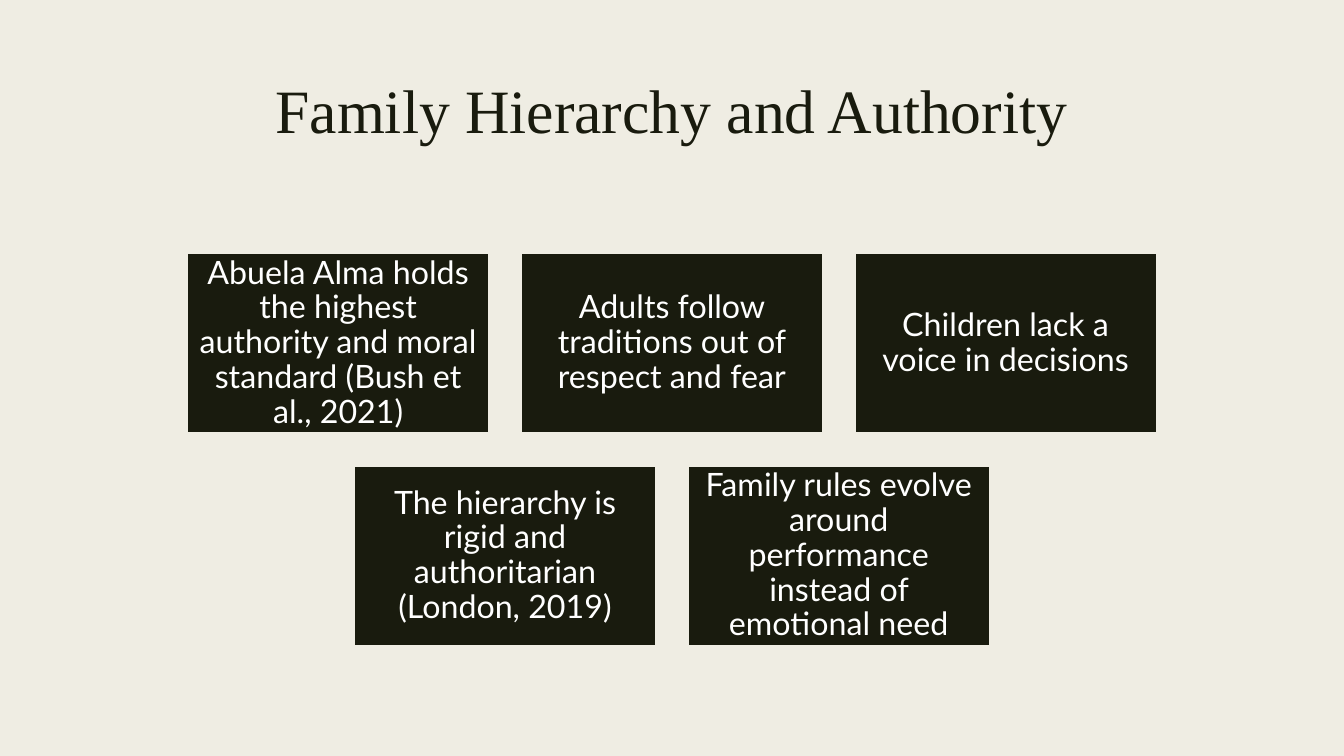
"""Build the slide on family hierarchy and authority."""
from pptx import Presentation
from pptx.dml.color import RGBColor
from pptx.enum.shapes import MSO_SHAPE
from pptx.enum.text import MSO_ANCHOR, PP_ALIGN
from pptx.util import Inches, Pt

COLORS = {"cream": "EFEDE3", "olive": "191B0E", "white": "FFFFFF"}
SLIDE_WIDTH, SLIDE_HEIGHT = 13.33, 7.5
CARD_WIDTH, CARD_HEIGHT, CARD_GAP = 3.01, 1.81, 0.3
CARDS_TOP = 2.5
CARD_ROWS = [
    [
        "Abuela Alma holds the highest authority and moral standard (Bush et al., 2021)",
        "Adults follow traditions out of respect and fear",
        "Children lack a voice in decisions",
    ],
    [
        "The hierarchy is rigid and authoritarian (London, 2019)",
        "Family rules evolve around performance instead of emotional need",
    ],
]


def color(name):
    return RGBColor.from_string(COLORS[name])


def write_text(frame, wording, font_name, size, color_name, spacing):
    frame.word_wrap = True
    paragraph = frame.paragraphs[0]
    paragraph.alignment = PP_ALIGN.CENTER
    paragraph.line_spacing = spacing
    run = paragraph.add_run()
    run.text = wording
    run.font.name = font_name
    run.font.size = Pt(size)
    run.font.color.rgb = color(color_name)


def set_title(slide, wording):
    title = slide.shapes.title
    title.left, title.top = Inches(0.7), Inches(0.75)
    title.width, title.height = Inches(11.93), Inches(1.62)
    title.text_frame.vertical_anchor = MSO_ANCHOR.TOP
    write_text(title.text_frame, wording, "Times New Roman", 44, "olive", 0.89)


def add_card(slide, left, top, wording):
    card = slide.shapes.add_shape(
        MSO_SHAPE.RECTANGLE,
        Inches(left), Inches(top), Inches(CARD_WIDTH), Inches(CARD_HEIGHT),
    )
    card.shadow.inherit = False
    card.fill.solid()
    card.fill.fore_color.rgb = color("olive")
    card.line.color.rgb = color("cream")
    card.line.width = Pt(2.75)
    frame = card.text_frame
    frame.vertical_anchor = MSO_ANCHOR.MIDDLE
    frame.margin_left = frame.margin_right = Inches(0.1)
    frame.margin_top = frame.margin_bottom = Inches(0.1)
    write_text(frame, wording, "Lato", 23, "white", 0.9)


def add_card_row(slide, top, wordings):
    pitch = CARD_WIDTH + CARD_GAP
    row_width = len(wordings) * pitch - CARD_GAP
    row_left = (SLIDE_WIDTH - row_width) / 2
    for column, wording in enumerate(wordings):
        add_card(slide, row_left + column * pitch, top, wording)


def main():
    presentation = Presentation()
    presentation.slide_width = Inches(SLIDE_WIDTH)
    presentation.slide_height = Inches(SLIDE_HEIGHT)
    slide = presentation.slides.add_slide(presentation.slide_layouts[5])
    slide.background.fill.solid()
    slide.background.fill.fore_color.rgb = color("cream")
    set_title(slide, "Family Hierarchy and Authority")
    for row, wordings in enumerate(CARD_ROWS):
        add_card_row(slide, CARDS_TOP + row * (CARD_HEIGHT + CARD_GAP), wordings)
    presentation.save("out.pptx")


if __name__ == "__main__":
    main()
